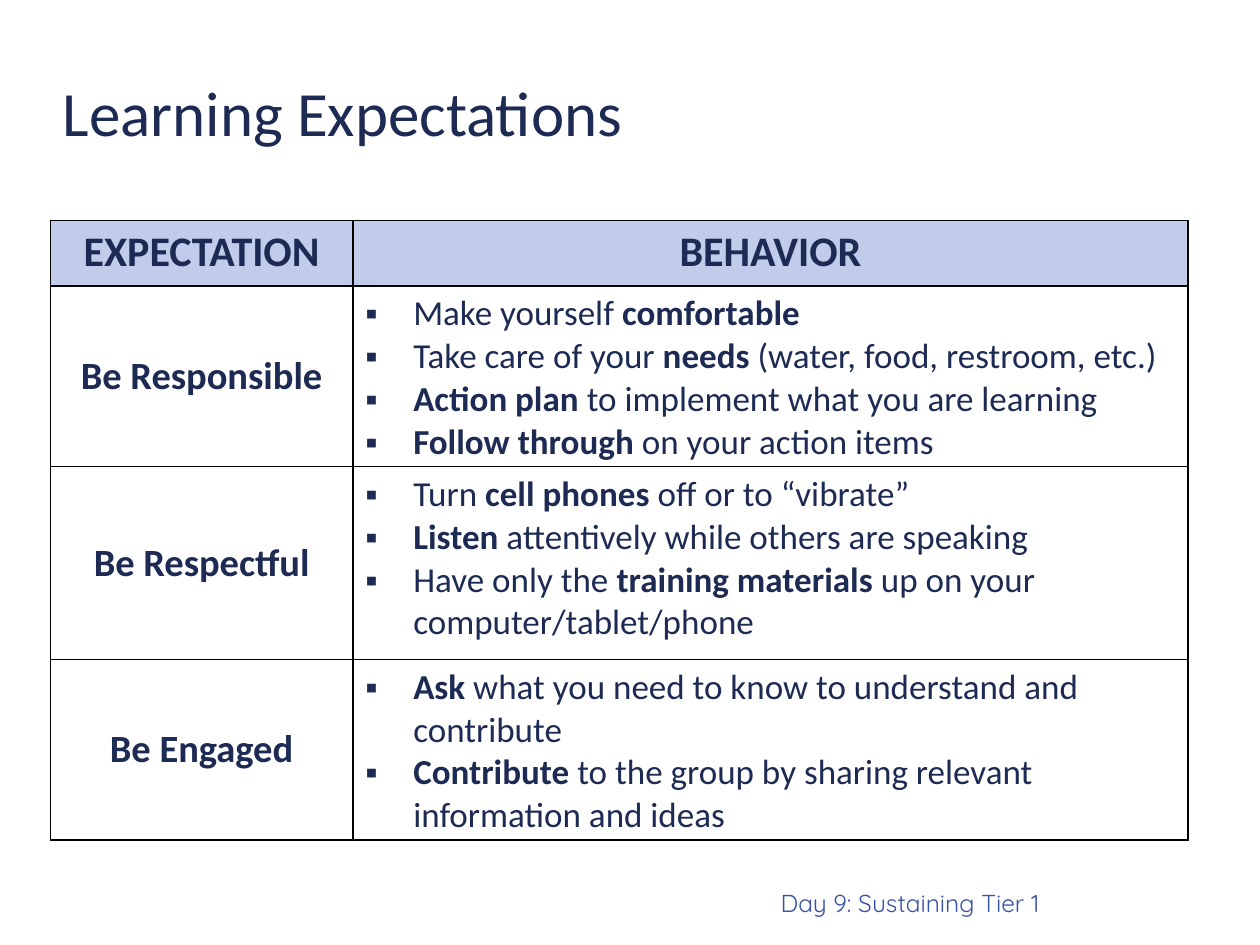
from dataclasses import dataclass

from lxml import etree
from pptx import Presentation
from pptx.dml.color import RGBColor
from pptx.enum.text import MSO_ANCHOR, PP_ALIGN
from pptx.oxml.ns import qn
from pptx.util import Inches, Pt

LEFT, CENTER, RIGHT = PP_ALIGN.LEFT, PP_ALIGN.CENTER, PP_ALIGN.RIGHT
TOP, MIDDLE, BOTTOM = MSO_ANCHOR.TOP, MSO_ANCHOR.MIDDLE, MSO_ANCHOR.BOTTOM

WIDTH, HEIGHT = 10, 7.5
MARGIN = 0.04 * WIDTH
COLUMNS = (2.4, 6.63)
ROWS = (0.52, 1.37, 1.53, 1.37)
INDENT = 0.38
NAVY, BLUE, PALE, BLACK = "1D2A53", "3A53A5", "C1CCEB", "000000"


@dataclass
class TextStyle:
    size: float
    color: str = NAVY
    font: str = "Calibri"
    bold: bool = False
    align: PP_ALIGN = LEFT
    anchor: MSO_ANCHOR = TOP
    bullet: str = ""
    indent: float = 0


@dataclass
class Expectation:
    name: str
    behaviors: list[str]  # words between ** are bold


TITLE = TextStyle(36, anchor=MIDDLE)
FOOTER = TextStyle(14, BLUE, "Quicksand", align=RIGHT, anchor=BOTTOM)
HEADER = TextStyle(24, bold=True, align=CENTER, indent=INDENT)
NAME = TextStyle(22, bold=True, align=CENTER, anchor=MIDDLE, indent=INDENT)
BEHAVIOR = TextStyle(20, bullet="▪", indent=INDENT)

HEADINGS = ("EXPECTATION", "BEHAVIOR")
EXPECTATIONS = [
    Expectation("Be Responsible", [
        "Make yourself **comfortable**",
        "Take care of your **needs** (water, food, restroom, etc.)",
        "**Action plan **to implement what you are learning",
        "**Follow through **on your action items",
    ]),
    Expectation("Be Respectful", [
        "Turn **cell phones** off or to “vibrate”",
        "**Listen **attentively while others are speaking",
        "Have only the **training materials **up on your computer/tablet/phone",
    ]),
    Expectation("Be Engaged", [
        "**Ask** what you need to know to understand and contribute",
        "**Contribute **to the group by sharing relevant information and ideas",
    ]),
]


def rgb(value: str) -> RGBColor:
    return RGBColor.from_string(value)


def set_indent(paragraph, style: TextStyle) -> None:
    """Hang the first line and add the bullet, if any."""
    properties = paragraph._p.get_or_add_pPr()
    properties.set("marL", str(Inches(style.indent)))
    properties.set("indent", str(-Inches(style.indent)))
    if style.bullet:
        color = etree.SubElement(properties, qn("a:buClr"))
        etree.SubElement(color, qn("a:srgbClr"), val=style.color)
        etree.SubElement(properties, qn("a:buFont"), typeface="Arial")
        etree.SubElement(properties, qn("a:buChar"), char=style.bullet)


def write(frame, lines: list[str], style: TextStyle) -> None:
    frame.word_wrap = True
    for index, line in enumerate(lines):
        paragraph = frame.add_paragraph() if index else frame.paragraphs[0]
        set_indent(paragraph, style)
        paragraph.alignment = style.align
        for part, words in enumerate(line.split("**")):
            if not words:
                continue
            run = paragraph.add_run()
            run.text = words
            run.font.name = style.font
            run.font.size = Pt(style.size)
            run.font.bold = style.bold or part % 2 == 1
            run.font.color.rgb = rgb(style.color)


def add_label(slide, text: str, left: float, top: float, width: float,
              height: float, style: TextStyle) -> None:
    box = slide.shapes.add_textbox(*map(Inches, (left, top, width, height)))
    write(box.text_frame, [text], style)
    box.text_frame.vertical_anchor = style.anchor


def fill_cell(cell, lines: list[str], style: TextStyle, fill: str = "") -> None:
    write(cell.text_frame, lines, style)
    cell.vertical_anchor = style.anchor
    properties = cell._tc.get_or_add_tcPr()
    for side in ("lnL", "lnR", "lnT", "lnB"):
        border = etree.SubElement(properties, qn(f"a:{side}"), w=str(Pt(1)))
        solid = etree.SubElement(border, qn("a:solidFill"))
        etree.SubElement(solid, qn("a:srgbClr"), val=BLACK)
    if fill:
        cell.fill.solid()
        cell.fill.fore_color.rgb = rgb(fill)
    else:
        cell.fill.background()


def add_expectations(slide) -> None:
    table = slide.shapes.add_table(
        len(ROWS), len(COLUMNS), Inches(MARGIN), Inches(1.75),
        Inches(sum(COLUMNS)), Inches(sum(ROWS))).table
    table.horz_banding = False
    for column, width in zip(table.columns, COLUMNS):
        column.width = Inches(width)
    for row, height in zip(table.rows, ROWS):
        row.height = Inches(height)
    for column, heading in enumerate(HEADINGS):
        fill_cell(table.cell(0, column), [heading], HEADER, PALE)
    for row, expectation in enumerate(EXPECTATIONS, start=1):
        fill_cell(table.cell(row, 0), [expectation.name], NAME)
        fill_cell(table.cell(row, 1), expectation.behaviors, BEHAVIOR)


def main() -> None:
    deck = Presentation()
    deck.slide_width, deck.slide_height = Inches(WIDTH), Inches(HEIGHT)
    slide = deck.slides.add_slide(deck.slide_layouts[6])

    # Footer, title and table
    add_label(slide, "Day 9: Sustaining Tier 1", 3.63, 6.69, 4.72, 0.64, FOOTER)
    add_label(slide, "Learning Expectations", MARGIN, 0.38, 7.64, 1, TITLE)
    add_expectations(slide)
    deck.save("out.pptx")


if __name__ == "__main__":
    main()
